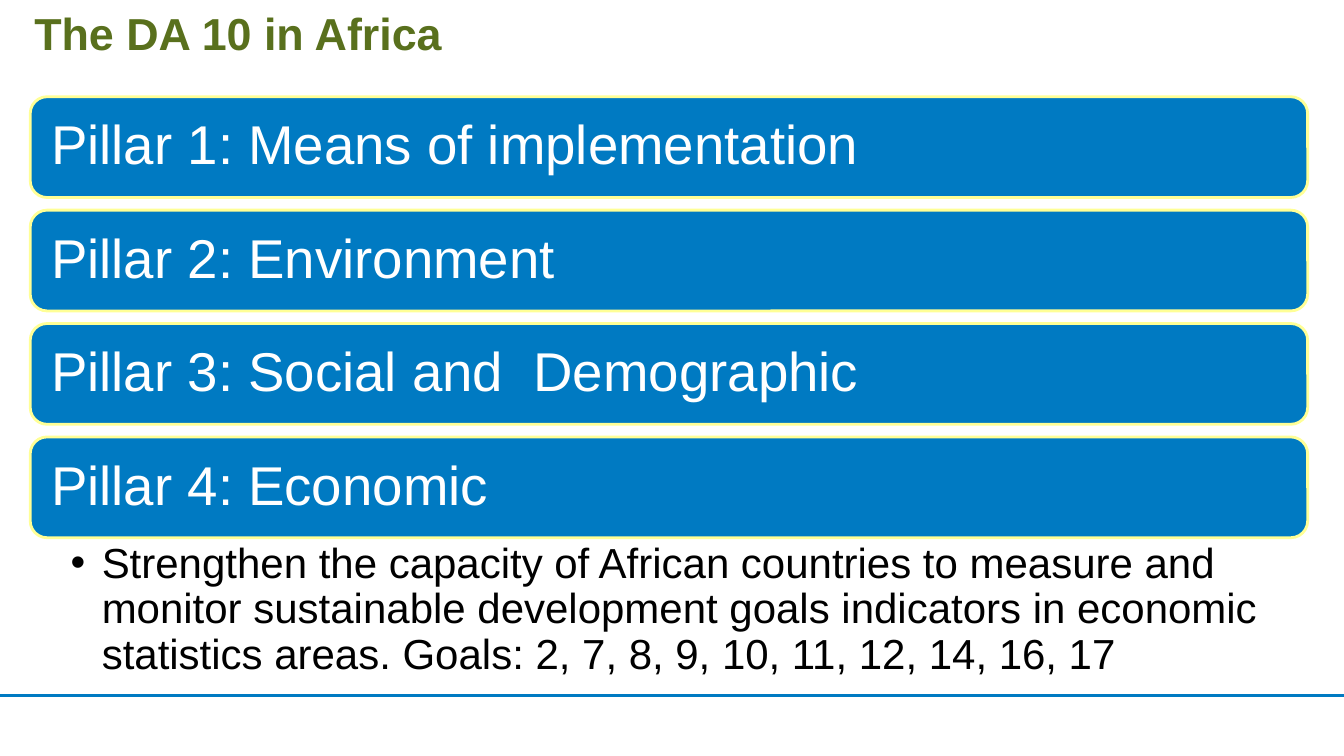
from lxml.etree import SubElement
from pptx import Presentation
from pptx.dml.color import RGBColor
from pptx.enum.shapes import MSO_CONNECTOR, MSO_SHAPE
from pptx.enum.text import MSO_ANCHOR, PP_ALIGN
from pptx.oxml.ns import qn
from pptx.util import Inches, Pt

BLUE, GREEN, CREAM = "007AC2", "59701D", "FFFF96"
WHITE, BLACK = "FFFFFF", "000000"


def paint(fmt, code):
    fmt.solid()
    fmt.fore_color.rgb = RGBColor.from_string(code)


def write(shape, text, size, code, pads, bold=False, **style):
    frame = shape.text_frame
    frame.word_wrap = True
    sides = ("left", "top", "right", "bottom")
    for side, pad in zip(sides, pads):
        setattr(frame, f"margin_{side}", Inches(pad))
    para = frame.paragraphs[0]
    para.text = text
    for key, value in {"alignment": PP_ALIGN.LEFT, **style}.items():
        setattr(para, key, value)
    font = para.runs[0].font
    for key, value in {"name": "Arial", "size": Pt(size), "bold": bold}.items():
        setattr(font, key, value)
    paint(font.fill, code)
    return para


deck = Presentation()
deck.slide_width, deck.slide_height = Inches(13.33), Inches(7.5)
slide = deck.slides.add_slide(deck.slide_layouts[6])
shapes = slide.shapes
paint(slide.background.fill, WHITE)

base = Inches(6.9)
rule = shapes.add_connector(MSO_CONNECTOR.STRAIGHT, 0, base, deck.slide_width, base)
paint(rule.line.fill, BLUE)
rule.line.width = Pt(1.5)
SubElement(rule._element.spPr, qn("a:effectLst"))

title = shapes.add_textbox(Inches(0.34), Inches(0.06), Inches(12.64), Inches(0.54))
write(title, "The DA 10 in Africa", 32, GREEN, (0, 0, 0, 0), bold=True)

left, top, wide, high, step = 0.3, 0.96, 12.67, 1, 1.125
pillars = [
    "Means of implementation",
    "Environment",
    "Social and  Demographic",
    "Economic",
]
for row, name in enumerate(pillars):
    bar = shapes.add_shape(
        MSO_SHAPE.ROUNDED_RECTANGLE,
        Inches(left), Inches(top + row * step), Inches(wide), Inches(high),
    )
    bar.shadow.inherit = False
    paint(bar.fill, BLUE)
    paint(bar.line.fill, CREAM)
    bar.line.width = Pt(2)
    bar.text_frame.vertical_anchor = MSO_ANCHOR.MIDDLE
    write(bar, f"Pillar {row + 1}: {name}", 39, WHITE, (0.16,) * 4, line_spacing=0.9)

goal = (
    "Strengthen the capacity of African countries to measure and monitor "
    "sustainable development goals indicators in economic statistics areas. "
    "Goals: 2, 7, 8, 9, 10, 11, 12, 14, 16, 17"
)
note = shapes.add_textbox(Inches(left), Inches(5.33), Inches(wide), Inches(1.41))
para = write(note, goal, 30, BLACK, (0.4, 0.05, 0.3, 0.05), line_spacing=0.9)
props = para._p.get_or_add_pPr()
hang = Inches(0.31)
props.set("marL", str(hang))
props.set("indent", str(-hang))
SubElement(props, qn("a:buFont")).set("typeface", "Arial")
SubElement(props, qn("a:buChar")).set("char", "•")

deck.save("out.pptx")
